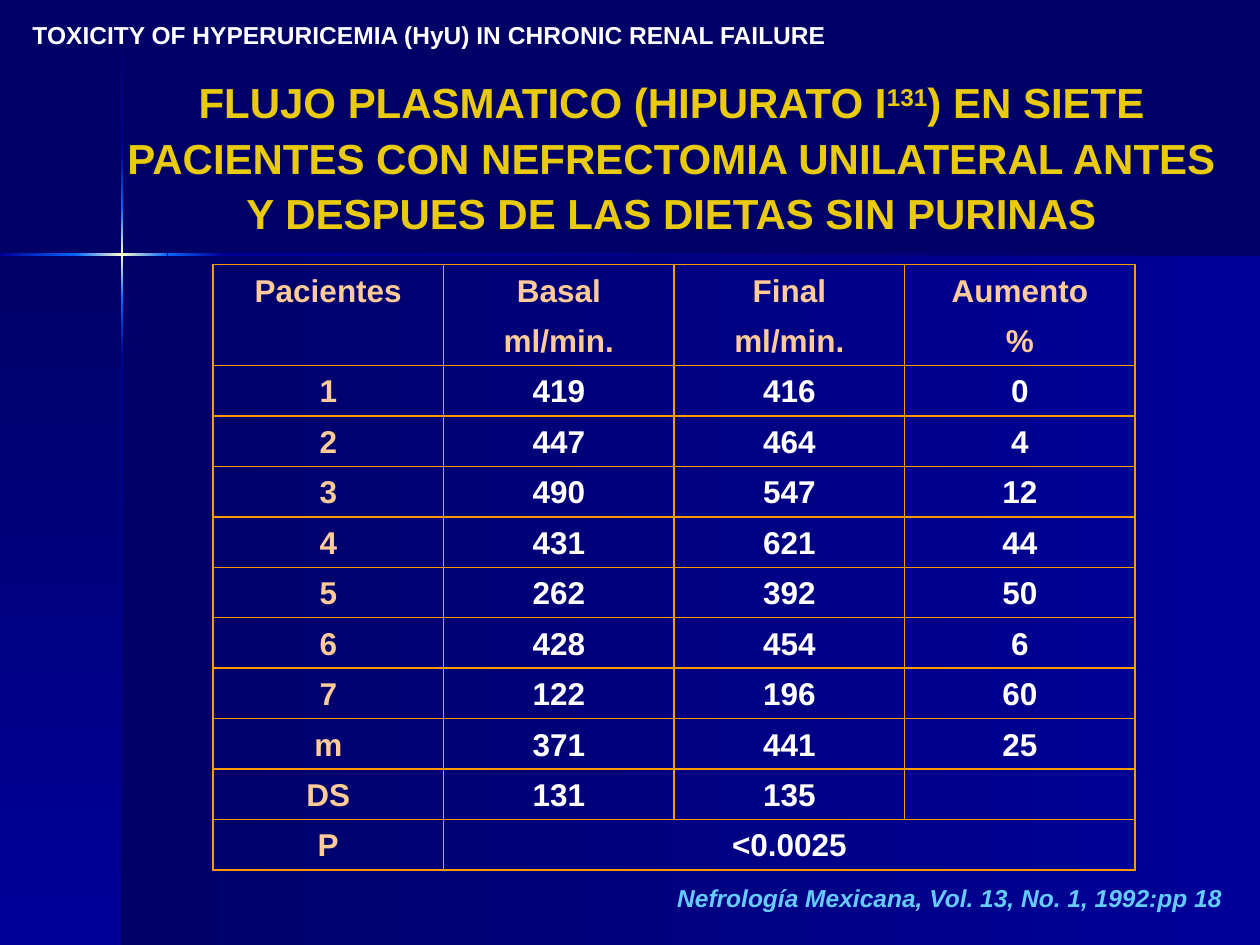
from lxml.etree import SubElement
from pptx import Presentation
from pptx.dml.color import RGBColor
from pptx.enum.shapes import MSO_SHAPE
from pptx.enum.text import MSO_ANCHOR, MSO_AUTO_SIZE, PP_ALIGN
from pptx.oxml.ns import qn
from pptx.util import Inches, Pt

NAVY = RGBColor(0x00, 0x00, 0x66)
BLUE = RGBColor(0x00, 0x00, 0x99)
BRIGHT = RGBColor(0x00, 0x66, 0xFF)
CREAM = RGBColor(0xFF, 0xFF, 0xCC)
WHITE = RGBColor(0xFF, 0xFF, 0xFF)
GOLD = RGBColor(0xE9, 0xCA, 0x0F)
SKY = RGBColor(0x66, 0xCC, 0xFF)
PEACH = RGBColor(0xFF, 0xCC, 0x99)
ORANGE = RGBColor(0xFF, 0x99, 0x00)

HEADING = "TOXICITY OF HYPERURICEMIA (HyU) IN CHRONIC RENAL FAILURE"
TITLE = [
    "FLUJO PLASMATICO (HIPURATO I",
    "131",
    ") EN SIETE PACIENTES CON NEFRECTOMIA UNILATERAL ANTES Y DESPUES DE LAS DIETAS SIN PURINAS",
]
CITATION = "Nefrología Mexicana, Vol. 13, No. 1, 1992:pp 18"
ROWS = [
    ["Pacientes", "Basal", "Final", "Aumento"],
    ["", "ml/min.", "ml/min.", "%"],
    ["1", "419", "416", "0"],
    ["2", "447", "464", "4"],
    ["3", "490", "547", "12"],
    ["4", "431", "621", "44"],
    ["5", "262", "392", "50"],
    ["6", "428", "454", "6"],
    ["7", "122", "196", "60"],
    ["m", "371", "441", "25"],
    ["DS", "131", "135", ""],
    ["P", "<0.0025", "", ""],
]
HEADER_ROWS = 2
COLUMN_WIDTH, ROW_HEIGHT = 1.83, 0.4

ACROSS, DOWN = 0, 90
BACKDROP = [
    (0.97, 2.02, 9.03, 5.48, ACROSS, [NAVY, BLUE]),
    (0, 2.02, 0.97, 5.48, DOWN, [NAVY, BLUE]),
]
GLOW = [BRIGHT, CREAM, BRIGHT]
VERTICAL_BEAM = [
    (0.01, 1.21, [NAVY, BLUE]),
    (2.82, 7.5, [BLUE, NAVY]),
    (2.38, 2.82, [BRIGHT, BLUE]),
    (1.21, 1.65, [BLUE, BRIGHT]),
    (1.65, 2.38, GLOW),
]
HORIZONTAL_BEAM = [
    (1.77, 10, [BLUE, NAVY]),
    (0, 0.61, [BLUE, BRIGHT]),
    (1.33, 1.77, [BRIGHT, BLUE]),
    (0.6, 1.33, GLOW),
]
BEAM_LEFT, BEAM_TOP, BEAM_THICKNESS = 0.96, 2.01, 0.02


def add_gradient_panel(page, left, top, width, height, angle, colors):
    panel = page.shapes.add_shape(
        MSO_SHAPE.RECTANGLE, Inches(left), Inches(top), Inches(width), Inches(height)
    )
    panel.shadow.inherit = False
    panel.line.fill.background()
    panel.fill.gradient()
    panel.fill.gradient_angle = (360 - angle) % 360
    stops = panel._element.spPr.find(qn("a:gradFill")).find(qn("a:gsLst"))
    for stop in list(stops):
        stops.remove(stop)
    for index, color in enumerate(colors):
        position = 100000 * index // (len(colors) - 1)
        stop = SubElement(stops, qn("a:gs"), pos=str(position))
        SubElement(stop, qn("a:srgbClr"), val=str(color))


def format_paragraph(para, size, color, alignment, italic=None):
    para.alignment = alignment
    for span in para.runs:
        span.font.name = "Arial"
        span.font.size = Pt(size)
        span.font.bold = True
        span.font.italic = italic
        span.font.color.rgb = color


def add_text(page, left, top, width, height, spans, size, color, alignment,
             line_spacing=None, italic=None):
    box = page.shapes.add_textbox(Inches(left), Inches(top), Inches(width), Inches(height))
    box.text_frame.word_wrap = True
    box.text_frame.auto_size = MSO_AUTO_SIZE.SHAPE_TO_FIT_TEXT
    para = box.text_frame.paragraphs[0]
    para.line_spacing = line_spacing
    for text in spans:
        para.add_run().text = text
    format_paragraph(para, size, color, alignment, italic)
    return para


def set_borders(cell, hidden):
    properties = cell._tc.get_or_add_tcPr()
    for side in ("lnL", "lnR", "lnT", "lnB"):
        line = SubElement(properties, qn(f"a:{side}"), w=str(Pt(1)))
        if side in hidden:
            SubElement(line, qn("a:noFill"))
        else:
            fill = SubElement(line, qn("a:solidFill"))
            SubElement(fill, qn("a:srgbClr"), val=str(ORANGE))


def add_results_table(page):
    row_count, column_count = len(ROWS), len(ROWS[0])
    table = page.shapes.add_table(
        row_count, column_count, Inches(1.69), Inches(2.1),
        Inches(COLUMN_WIDTH * column_count), Inches(ROW_HEIGHT * row_count),
    ).table
    table.first_row = False
    table.horz_banding = False
    for column in table.columns:
        column.width = Inches(COLUMN_WIDTH)
    for row in table.rows:
        row.height = Inches(ROW_HEIGHT)
    hidden_sides = {0: ["lnB"], 1: ["lnT"]}
    for row_index, values in enumerate(ROWS):
        for column_index, value in enumerate(values):
            cell = table.cell(row_index, column_index)
            cell.text_frame.text = value
            cell.vertical_anchor = MSO_ANCHOR.BOTTOM
            is_label = row_index < HEADER_ROWS or column_index == 0
            format_paragraph(cell.text_frame.paragraphs[0], 18,
                             PEACH if is_label else WHITE, PP_ALIGN.CENTER)
            set_borders(cell, hidden_sides.get(row_index, []))
            cell.fill.background()
    last_row = row_count - 1
    table.cell(last_row, 1).merge(table.cell(last_row, column_count - 1))


def main():
    deck = Presentation()
    deck.slide_width, deck.slide_height = Inches(10), Inches(7.5)
    page = deck.slides.add_slide(deck.slide_layouts[6])
    page.background.fill.solid()
    page.background.fill.fore_color.rgb = NAVY

    for panel in BACKDROP:
        add_gradient_panel(page, *panel)
    for start, end, colors in VERTICAL_BEAM:
        add_gradient_panel(page, BEAM_LEFT, start, BEAM_THICKNESS, end - start, DOWN, colors)
    for start, end, colors in HORIZONTAL_BEAM:
        add_gradient_panel(page, start, BEAM_TOP, end - start, BEAM_THICKNESS, ACROSS, colors)

    add_text(page, 0.16, 0.04, 9.17, 0.38, [HEADING], 14, WHITE, PP_ALIGN.LEFT, 1.3)
    title = add_text(page, 0.83, 0.52, 9, 1.43, TITLE, 24, GOLD, PP_ALIGN.CENTER, 1.1)
    title.runs[1].font._element.set("baseline", "30000")
    add_text(page, 1.22, 6.96, 8.58, 0.33, [CITATION], 14, SKY, PP_ALIGN.RIGHT, italic=True)
    add_results_table(page)
    deck.save("out.pptx")


if __name__ == "__main__":
    main()
